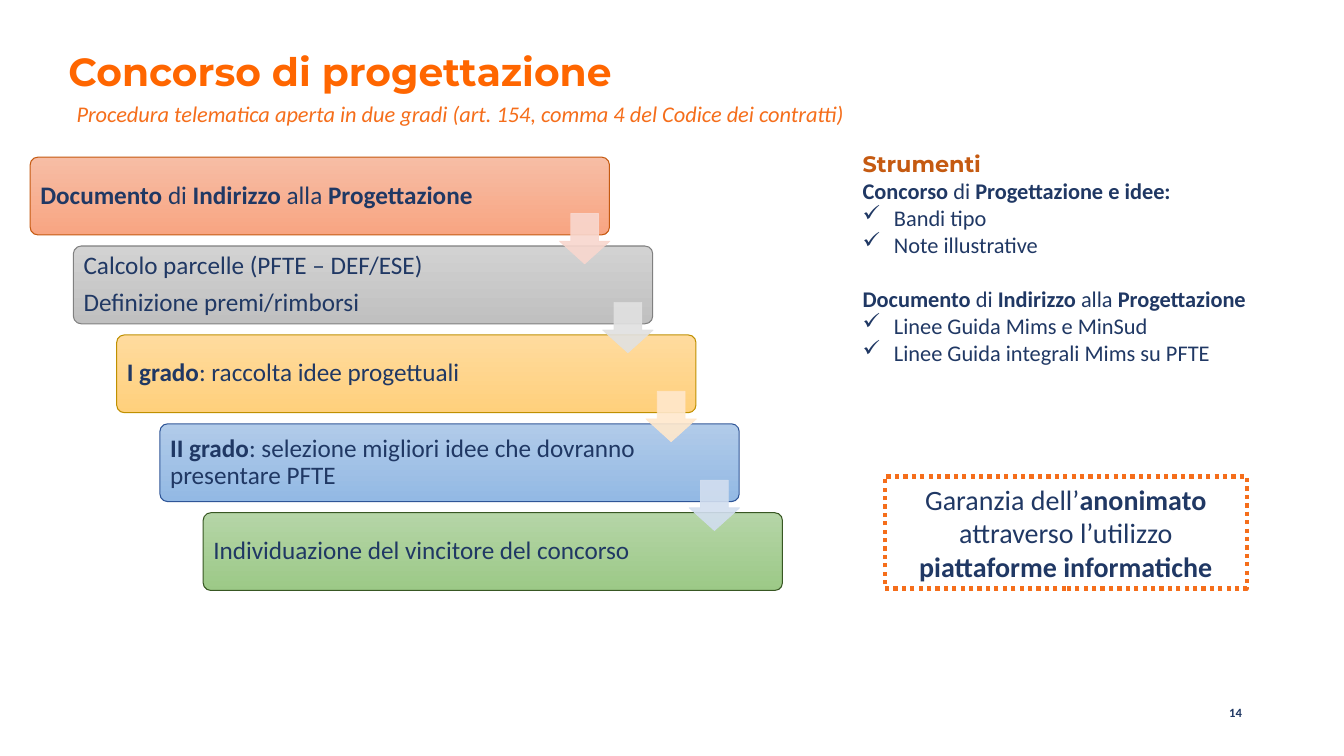
from lxml import etree
from pptx import Presentation
from pptx.dml.color import RGBColor
from pptx.enum.dml import MSO_LINE
from pptx.enum.shapes import MSO_SHAPE
from pptx.enum.text import MSO_ANCHOR, MSO_AUTO_SIZE, PP_ALIGN
from pptx.oxml.ns import qn
from pptx.util import Cm, Pt

ROUNDED, ARROW, RECTANGLE = MSO_SHAPE.ROUNDED_RECTANGLE, MSO_SHAPE.DOWN_ARROW, MSO_SHAPE.RECTANGLE
MIDDLE = MSO_ANCHOR.MIDDLE
LEFT, CENTER, RIGHT = PP_ALIGN.LEFT, PP_ALIGN.CENTER, PP_ALIGN.RIGHT
DOTTED = MSO_LINE.ROUND_DOT
NO_AUTOFIT = MSO_AUTO_SIZE.NONE
NAVY, ORANGE, RUST = "203864", "F56E1B", "C55A11"


def rgb(value):
    return RGBColor.from_string(value)


def write(paragraph, text, size, color=NAVY, font="Calibri", align=LEFT):
    paragraph.alignment = align
    for position, part in enumerate(text.split("*")):
        if part:
            run = paragraph.add_run()
            run.text = part
            run.font.name = font
            run.font.size = Pt(size)
            run.font.bold = position % 2 == 1
            run.font.color.rgb = rgb(color)


deck = Presentation()
deck.slide_width, deck.slide_height = Cm(33.87), Cm(19.05)
slide = deck.slides.add_slide(deck.slide_layouts[5])
shapes = slide.shapes

title = shapes.title
title.left, title.top, title.width, title.height = Cm(1.47), Cm(0.97), Cm(25.4), Cm(1.78)
title.text_frame.auto_size = NO_AUTOFIT
title.text_frame.vertical_anchor = MIDDLE
title.text_frame.paragraphs[0].line_spacing = 0.9
write(title.text_frame.paragraphs[0], "*Concorso di progettazione*", 28, "FF6600", "Montserrat")

subtitle = shapes.add_textbox(Cm(1.68), Cm(2.41), Cm(20.65), Cm(0.94)).text_frame
subtitle.word_wrap = True
write(subtitle.paragraphs[0],
      "Procedura telematica aperta in due gradi (art. 154, comma 4 del Codice dei contratti)",
      16, ORANGE)
subtitle.paragraphs[0].runs[0].font.italic = True

phases = [
    (["*Documento* di *Indirizzo* alla *Progettazione*"], "F7BDA5", "F8A582", RUST),
    (["Calcolo parcelle (PFTE – DEF/ESE)", "Definizione premi/rimborsi"], "D2D2D2", "C0C0C0", "808080"),
    (["*I grado*: raccolta idee progettuali"], "FFDB9E", "FFD07C", "BF9000"),
    (["*II grado*: selezione migliori idee che dovranno presentare PFTE"], "B1CBE9", "93B9E4", "2F5597"),
    (["Individuazione del vincitore del concorso"], "B5D5A7", "9CC987", "385723"),
]
STEP_X, STEP_Y = 1.09, 2.24
for index, (lines, light, dark, border) in enumerate(phases):
    phase = shapes.add_shape(ROUNDED, Cm(0.76 + index * STEP_X), Cm(3.96 + index * STEP_Y),
                             Cm(14.6), Cm(1.96))
    phase.adjustments[0] = 0.1
    phase.shadow.inherit = False
    phase.fill.gradient()
    phase.fill.gradient_angle = 270
    for stop, color in zip(phase.fill.gradient_stops, (light, dark)):
        stop.color.rgb = rgb(color)
    phase.line.color.rgb = rgb(border)
    phase.line.width = Pt(0.75)
    frame = phase.text_frame
    frame.word_wrap = True
    frame.vertical_anchor = MIDDLE
    frame.margin_left, frame.margin_right = Cm(0.2), Cm(2.53)
    frame.margin_top = frame.margin_bottom = Cm(0.18)
    for number, line in enumerate(lines):
        paragraph = frame.add_paragraph() if number else frame.paragraphs[0]
        paragraph.line_spacing = 0.9
        paragraph.space_after = Pt(6.5)
        write(paragraph, line, 18)

for index, tint in enumerate(["F8D7CE", "E1E1E1", "FFE8CC", "D2DEEF"]):
    arrow = shapes.add_shape(ARROW, Cm(14.1 + index * STEP_X), Cm(5.38 + index * STEP_Y),
                             Cm(1.27), Cm(1.27))
    arrow.adjustments[0], arrow.adjustments[1] = 0.55, 0.45
    arrow.shadow.inherit = False
    arrow.fill.solid()
    arrow.fill.fore_color.rgb = rgb(tint)
    arrow.line.color.rgb = rgb(tint)
    arrow.line.width = Pt(0.5)
    for color in arrow._element.spPr.iter(qn("a:srgbClr")):
        etree.SubElement(color, qn("a:alpha"), val="90000")

tools = shapes.add_textbox(Cm(21.49), Cm(3.66), Cm(10.74), Cm(5.74)).text_frame
tools.word_wrap = True
write(tools.paragraphs[0], "*Strumenti*", 16, RUST, "Montserrat")
tool_groups = [
    ("*Concorso* di *Progettazione e idee:*", ["Bandi tipo", "Note illustrative"], 0),
    ("*Documento* di *Indirizzo* alla *Progettazione*",
     ["Linee Guida Mims e MinSud", "Linee Guida integrali Mims su PFTE"], 19.5),
]
for heading, items, gap in tool_groups:
    paragraph = tools.add_paragraph()
    paragraph.space_before = Pt(gap)
    write(paragraph, heading, 16)
    for item in items:
        paragraph = tools.add_paragraph()
        properties = paragraph._p.get_or_add_pPr()
        properties.set("marL", str(Cm(0.79)))
        properties.set("indent", str(-Cm(0.79)))
        etree.SubElement(properties, qn("a:buChar"), char="✓")
        write(paragraph, item, 16)

guarantee = shapes.add_shape(RECTANGLE, Cm(22.3), Cm(12.01), Cm(9.12), Cm(2.82))
guarantee.shadow.inherit = False
guarantee.fill.background()
guarantee.line.color.rgb = rgb(ORANGE)
guarantee.line.width = Pt(3)
guarantee.line.dash_style = DOTTED
guarantee.text_frame.word_wrap = True
guarantee.text_frame.vertical_anchor = MIDDLE
write(guarantee.text_frame.paragraphs[0],
      "Garanzia dell’*anonimato *attraverso l’utilizzo *piattaforme informatiche*", 20, align=CENTER)

page_number = shapes.add_textbox(Cm(23.93), Cm(17.65), Cm(7.62), Cm(1.02)).text_frame
page_number.word_wrap = True
write(page_number.paragraphs[0], "*14*", 9, align=RIGHT)

deck.save("out.pptx")
